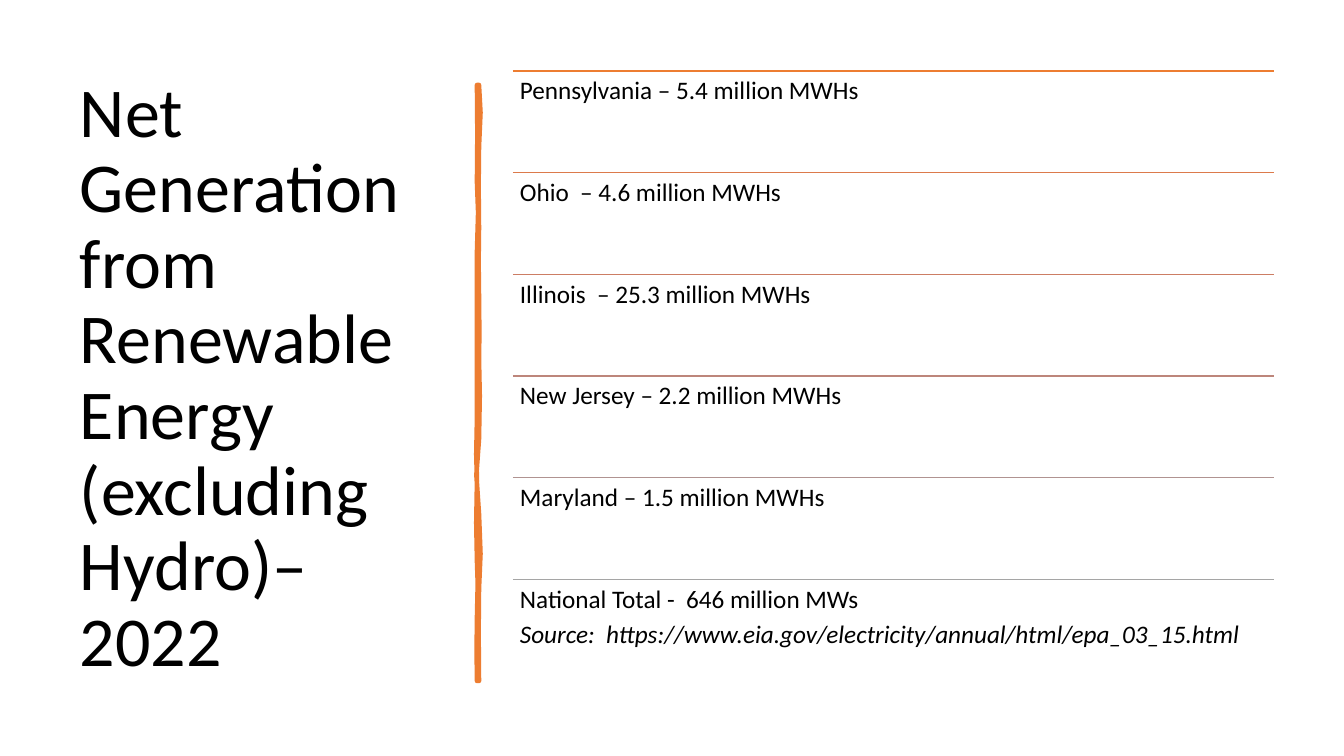
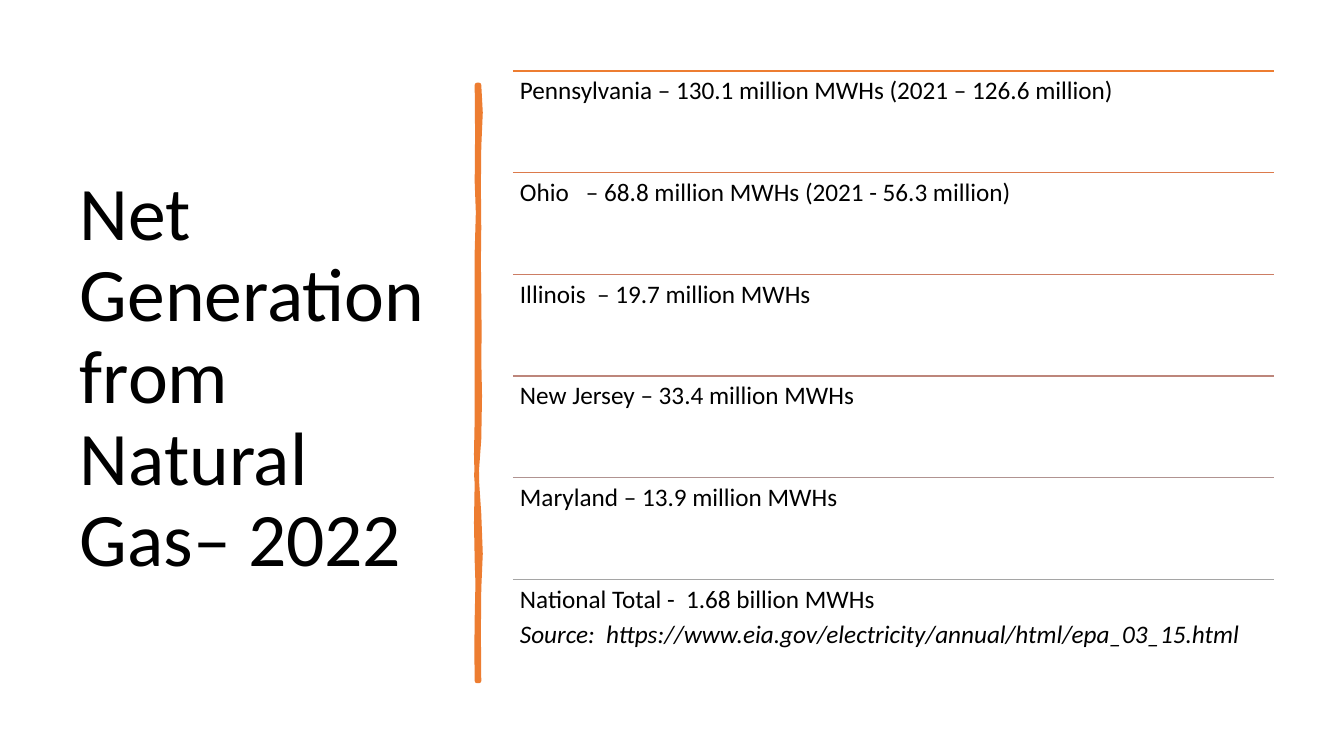
import dataclasses

import lxml.etree
import pptx
import pptx.dml.color
import pptx.enum.shapes
import pptx.enum.text
import pptx.oxml.ns
import pptx.util

# Shared style: the slide is 1344 by 756 px
EMU_PER_PX = 914400 / 100.8
SLIDE_WIDTH, SLIDE_HEIGHT = 1344, 756
FONT = "Calibri"
COLORS = {"background": "FFFFFF", "text": "000000", "brush": "ED7D31"}
RULE_COLORS = ["ED7D31", "DC7A4B", "CC7D64", "BD867B", "B09391", "A5A5A5"]
LIST_LEFT, LIST_TOP, LIST_WIDTH, LIST_HEIGHT = 513, 71, 761, 610
LIST_INSET = 7
SOURCE = "Source:  https://www.eia.gov/electricity/annual/html/epa_03_15.html"

# Hand-drawn divider: start point, then two control points and an end per curve
BRUSH_START = (479, 85)
BRUSH_CURVES = [
    # right edge, downwards
    (481, 103, 481, 120, 479, 147), (477, 174, 480, 197, 479, 228),
    (478, 259, 479, 264, 479, 296), (478, 328, 481, 345, 479, 359),
    (477, 373, 483, 417, 479, 439), (475, 461, 476, 488, 479, 514),
    (481, 540, 481, 569, 479, 589), (477, 608, 480, 655, 479, 681),
    # left edge, upwards
    (478, 681, 477, 681, 477, 681), (478, 651, 475, 649, 477, 618),
    (478, 588, 478, 575, 477, 561), (476, 548, 476, 499, 477, 481),
    (477, 463, 475, 449, 477, 418), (478, 389, 476, 376, 477, 338),
    (478, 300, 476, 283, 477, 252), (478, 220, 479, 202, 477, 182),
    (474, 164, 481, 105, 477, 85),
]
CURVE_STEPS = 2


@dataclasses.dataclass
class GenerationSlide:
    title: str
    title_size: int
    entries: list[str]


SLIDES = [
    GenerationSlide(
        "Net Generation from Renewable Energy (excluding Hydro)– 2022", 50,
        ["Pennsylvania – 5.4 million MWHs",
         "Ohio  – 4.6 million MWHs",
         "Illinois  – 25.3 million MWHs",
         "New Jersey – 2.2 million MWHs",
         "Maryland – 1.5 million MWHs",
         "National Total -  646 million MWs"]),
    GenerationSlide(
        "Net Generation from Natural Gas– 2022", 54,
        ["Pennsylvania – 130.1 million MWHs (2021 – 126.6 million)",
         "Ohio   – 68.8 million MWHs (2021 - 56.3 million)",
         "Illinois  – 19.7 million MWHs",
         "New Jersey – 33.4 million MWHs",
         "Maryland – 13.9 million MWHs",
         "National Total -  1.68 billion MWHs"]),
]


def px(length: float) -> int:
    return round(length * EMU_PER_PX)


def color(value: str) -> pptx.dml.color.RGBColor:
    return pptx.dml.color.RGBColor.from_string(value)


def add_text_frame(slide, left: int, top: int, width: int, height: int):
    """Add a wrapping text box, placed in EMU, and return its text frame."""
    frame = slide.shapes.add_textbox(left, top, width, height).text_frame
    frame.word_wrap = True
    return frame


def add_run(paragraph, text: str, size: int, italic: bool = False) -> None:
    paragraph.line_spacing = 0.9
    run = paragraph.add_run()
    run.text = text
    run.font.name = FONT
    run.font.size = pptx.util.Pt(size)
    run.font.italic = italic
    run.font.color.rgb = color(COLORS["text"])


def add_title(slide, text: str, size: int) -> None:
    frame = add_text_frame(slide, px(70), px(71), px(377), px(616))
    frame.vertical_anchor = pptx.enum.text.MSO_ANCHOR.MIDDLE
    add_run(frame.paragraphs[0], text, size)


def brush_points() -> list[tuple[int, int]]:
    """Sample the divider's cubic curves as points in EMU."""
    points = []
    x0, y0 = BRUSH_START
    for x1, y1, x2, y2, x3, y3 in BRUSH_CURVES:
        for step in range(1, CURVE_STEPS + 1):
            t = step / CURVE_STEPS
            a, b, c, d = (1 - t) ** 3, 3 * t * (1 - t) ** 2, 3 * t * t * (1 - t), t ** 3
            points.append((px(a * x0 + b * x1 + c * x2 + d * x3),
                           px(a * y0 + b * y1 + c * y2 + d * y3)))
        x0, y0 = x3, y3
    return points


def add_brush_divider(slide) -> None:
    start_x, start_y = BRUSH_START
    builder = slide.shapes.build_freeform(px(start_x), px(start_y))
    builder.add_line_segments(brush_points(), close=True)
    shape = builder.convert_to_shape()
    shape.shadow.inherit = False
    shape.fill.solid()
    shape.fill.fore_color.rgb = color(COLORS["brush"])
    shape.line.color.rgb = color(COLORS["brush"])
    shape.line.width = pptx.util.Pt(3.25)
    line = shape._element.spPr.find(pptx.oxml.ns.qn("a:ln"))
    lxml.etree.SubElement(line, pptx.oxml.ns.qn("a:round"))


def add_rule(slide, top: int, rule_color: str) -> None:
    rule = slide.shapes.add_connector(
        pptx.enum.shapes.MSO_CONNECTOR.STRAIGHT,
        px(LIST_LEFT), top, px(LIST_LEFT + LIST_WIDTH), top)
    rule.line.color.rgb = color(rule_color)
    rule.line.width = pptx.util.Pt(1)
    lxml.etree.SubElement(rule._element.spPr, pptx.oxml.ns.qn("a:effectLst"))


def add_entries(slide, entries: list[str]) -> None:
    row_height = px(LIST_HEIGHT) // len(entries)
    for index, (entry, rule_color) in enumerate(zip(entries, RULE_COLORS)):
        top = px(LIST_TOP) + index * row_height
        add_rule(slide, top, rule_color)
        frame = add_text_frame(slide, px(LIST_LEFT), top, px(LIST_WIDTH), row_height)
        frame.margin_left = frame.margin_right = px(LIST_INSET)
        frame.margin_top = frame.margin_bottom = px(LIST_INSET)
        paragraph = frame.paragraphs[0]
        paragraph.space_after = pptx.util.Pt(6)
        add_run(paragraph, entry, 18)
    # The source line follows the national total in the last row
    add_run(frame.add_paragraph(), SOURCE, 18, italic=True)


def main() -> None:
    presentation = pptx.Presentation()
    presentation.slide_width = px(SLIDE_WIDTH)
    presentation.slide_height = px(SLIDE_HEIGHT)
    for content in SLIDES:
        slide = presentation.slides.add_slide(presentation.slide_layouts[6])
        slide.background.fill.solid()
        slide.background.fill.fore_color.rgb = color(COLORS["background"])
        add_title(slide, content.title, content.title_size)
        add_brush_divider(slide)
        add_entries(slide, content.entries)
    presentation.save("out.pptx")


if __name__ == "__main__":
    main()
